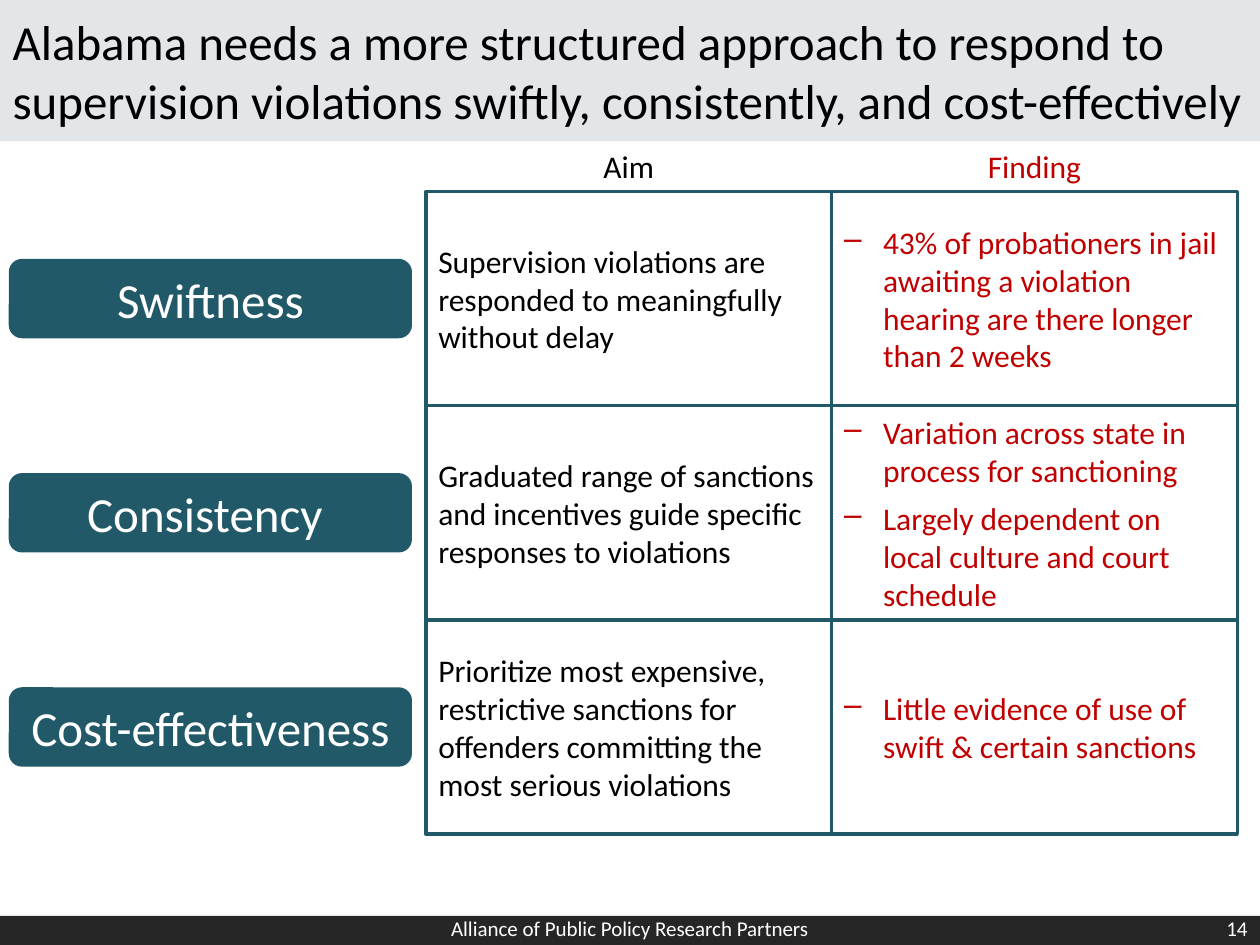
from pptx import Presentation
from pptx.dml.color import RGBColor
from pptx.enum.shapes import MSO_SHAPE
from pptx.enum.text import MSO_ANCHOR, MSO_AUTO_SIZE, PP_ALIGN
from pptx.oxml.ns import qn
from pptx.util import Inches, Pt
from lxml.etree import SubElement

# Content
TITLE = ("Alabama needs a more structured approach to respond to "
         "supervision violations swiftly, consistently, and cost-effectively")
HEADS = [("Aim", "black"), ("Finding", "red")]
ROWS = [
    ("Swiftness",
     "Supervision violations are responded to meaningfully without delay",
     ["43% of probationers in jail awaiting a violation hearing are there "
      "longer than 2 weeks"]),
    ("Consistency ",
     "Graduated range of sanctions and incentives guide specific responses "
     "to violations",
     ["Variation across state in process for sanctioning",
      "Largely dependent on local culture and court schedule"]),
    ("Cost-effectiveness",
     "Prioritize most expensive, restrictive sanctions for offenders "
     "committing the most serious violations",
     ["Little evidence of use of swift & certain sanctions"]),
]
FOOTER = "Alliance of Public Policy Research Partners"
PAGE = "14"

COLORS = {"black": "000000", "white": "FFFFFF", "red": "C00000",
          "teal": "215968", "band": "E2E6E9", "bar": "262626"}

# Grid, in inches
WIDE, HIGH = 10, 7.5
LEFT, TOP = 3.38, 1.52
COL, ROW = 3.22, 1.7
HEAD = 0.4
TAG_X, TAG_W, TAG_H = 0.07, 3.2, 0.63
BAND, BAR = 1.12, 0.23
INDENT = 0.31


def color(name):
    return RGBColor.from_string(COLORS[name])


def write(shape, lines, size, ink, align=PP_ALIGN.LEFT, dash=False):
    frame = shape.text_frame
    frame.word_wrap = True
    frame.auto_size = MSO_AUTO_SIZE.NONE
    frame.vertical_anchor = MSO_ANCHOR.MIDDLE
    frame.text = "\n".join(lines)
    for para in frame.paragraphs:
        para.alignment = align
        para.font.name = "Calibri"
        para.font.size = Pt(size)
        para.font.color.rgb = color(ink)
        if dash:
            para.space_before = Pt(6 if len(lines) > 1 else 0)
            props = para._p.get_or_add_pPr()
            props.set("marL", str(Inches(INDENT)))
            props.set("indent", str(-Inches(INDENT)))
            mark = SubElement(props, qn("a:buChar"))
            mark.set("char", "–")
            # Bullets come before the default run settings
            props.append(props.find(qn("a:defRPr")))


def box(slide, kind, area, fill, line=None):
    shape = slide.shapes.add_shape(kind, *map(Inches, area))
    shape.shadow.inherit = False
    shape.fill.solid()
    shape.fill.fore_color.rgb = color(fill)
    if line:
        shape.line.color.rgb = color(line)
        shape.line.width = Pt(2)
    else:
        shape.line.fill.background()
    return shape


def label(slide, area, text, size, ink, align):
    shape = slide.shapes.add_textbox(*map(Inches, area))
    write(shape, [text], size, ink, align)


def main():
    deck = Presentation()
    deck.slide_width, deck.slide_height = Inches(WIDE), Inches(HIGH)
    slide = deck.slides.add_slide(deck.slide_layouts[5])

    # Title band
    title = slide.shapes.title
    title.left, title.top = 0, 0
    title.width, title.height = Inches(WIDE), Inches(BAND)
    title.fill.solid()
    title.fill.fore_color.rgb = color("band")
    write(title, [TITLE], 28, "black")

    # Column heads
    for col, (text, ink) in enumerate(HEADS):
        area = (LEFT + col * COL, TOP - HEAD, COL, HEAD)
        label(slide, area, text, 18, ink, PP_ALIGN.CENTER)

    # Row tags and cells
    for row, (name, aim, found) in enumerate(ROWS):
        top = TOP + row * ROW
        area = (TAG_X, top + (ROW - TAG_H) / 2, TAG_W, TAG_H)
        tag = box(slide, MSO_SHAPE.ROUNDED_RECTANGLE, area, "teal")
        write(tag, [name], 28, "white", PP_ALIGN.CENTER)
        for col, lines in enumerate(([aim], found)):
            area = (LEFT + col * COL, top, COL, ROW)
            cell = box(slide, MSO_SHAPE.RECTANGLE, area, "white", "teal")
            write(cell, lines, 18, HEADS[col][1], dash=col == 1)

    # Footer bar
    box(slide, MSO_SHAPE.RECTANGLE, (0, HIGH - BAR, WIDE, BAR), "bar")
    mid = HIGH - BAR / 2 - 0.02
    label(slide, (3.22, mid - 0.2, 3.56, 0.4), FOOTER, 12, "white",
          PP_ALIGN.CENTER)
    label(slide, (7.67, mid - 0.2, 2.33, 0.4), PAGE, 12, "white",
          PP_ALIGN.RIGHT)

    deck.save("out.pptx")


if __name__ == "__main__":
    main()
